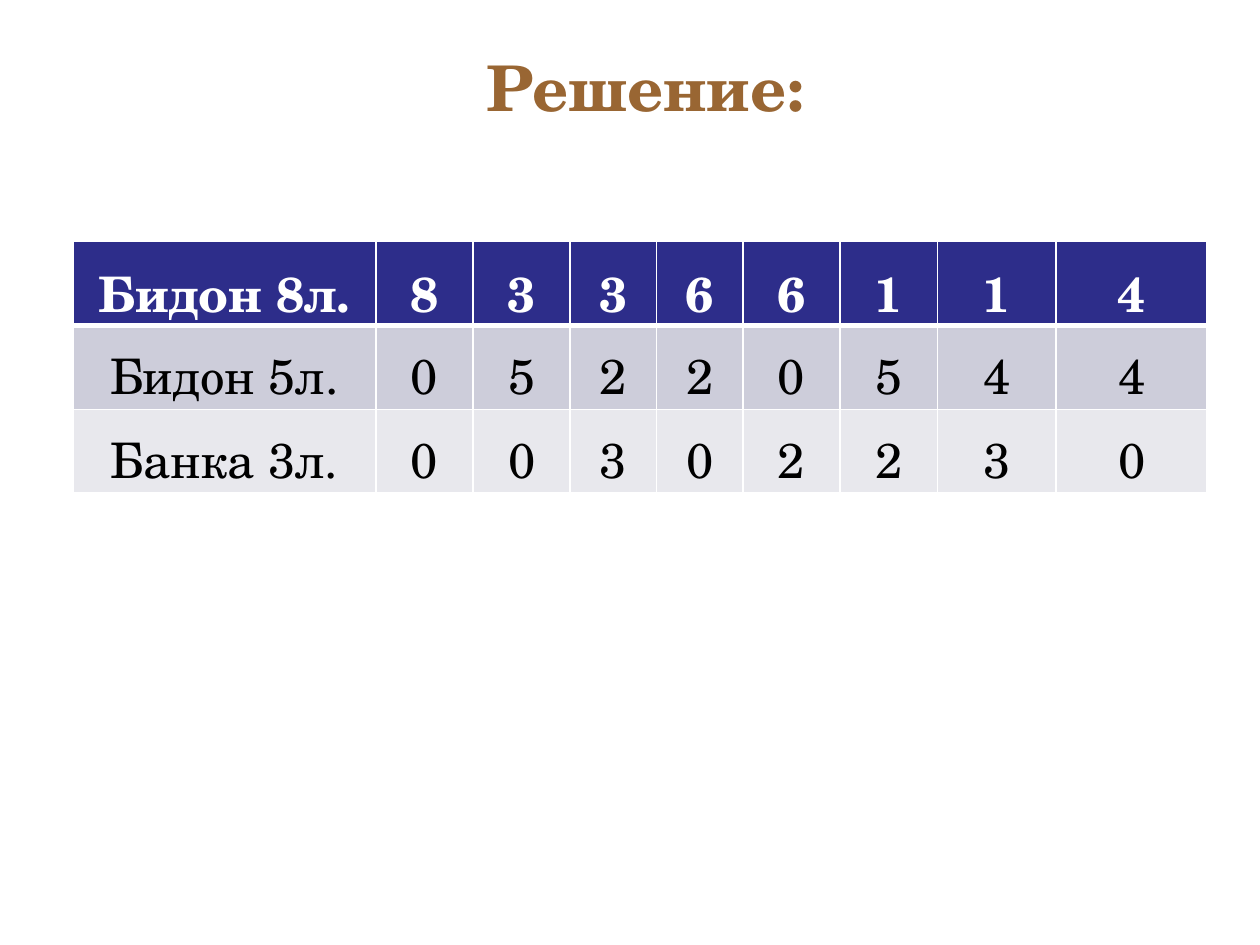
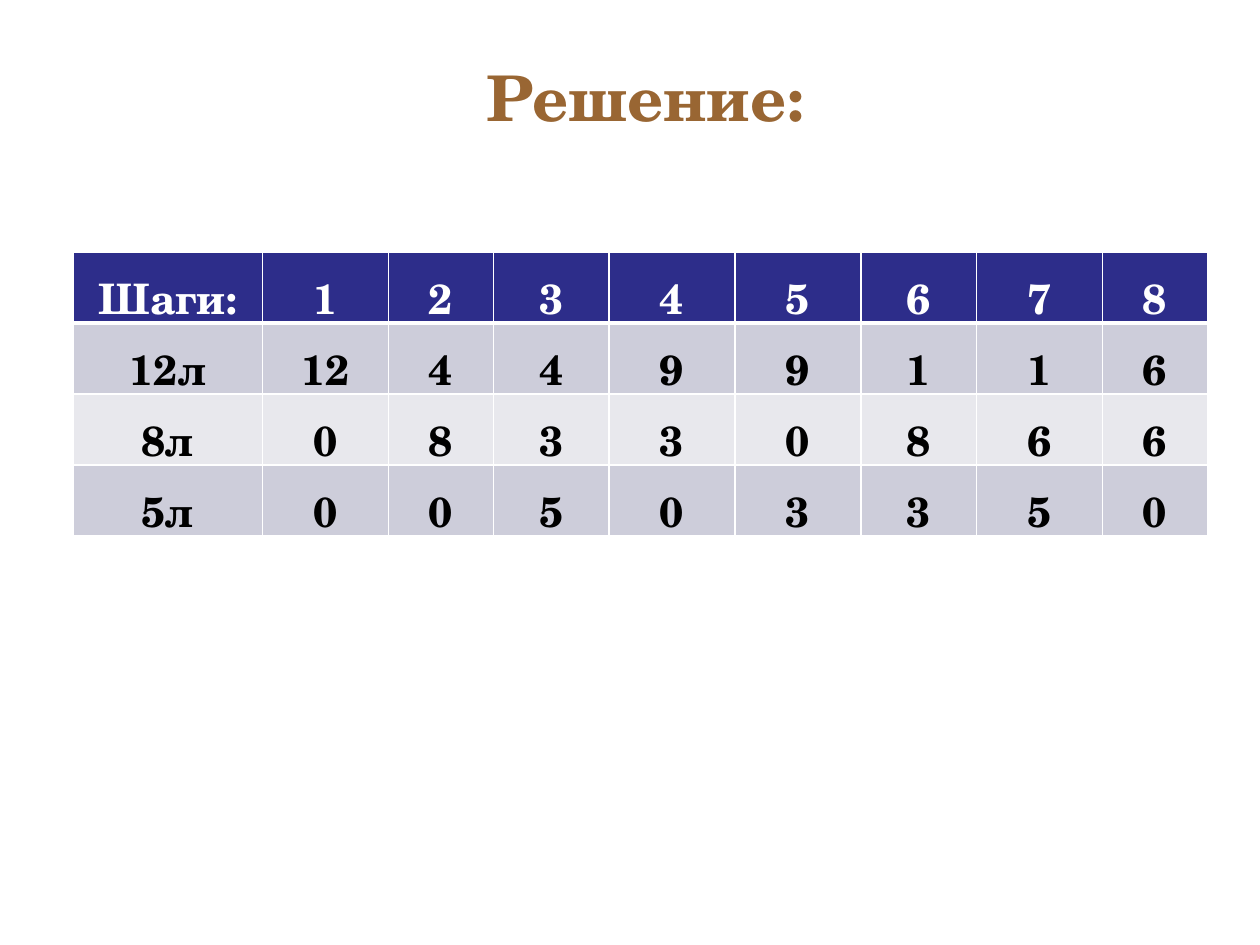
from dataclasses import dataclass

import pptx
import pptx.dml.color
import pptx.enum.text
import pptx.oxml.ns
import pptx.util
from lxml import etree
from pptx.util import Cm


@dataclass(frozen=True)
class Theme:
    font: str = "TeX Gyre Schola"
    title: str = "996633"
    header: str = "2D2D8A"
    bands: tuple = ("CDCDDA", "E8E8ED")
    light: str = "FFFFFF"
    dark: str = "000000"
    title_size: int = 36
    line: int = 1
    header_line: int = 3


def rgb(value):
    return pptx.dml.color.RGBColor.from_string(value)


def write(tf, text, *, font, size, color, bold):
    """Fill a text frame with one centred paragraph."""
    p = tf.paragraphs[0]
    p.alignment = pptx.enum.text.PP_ALIGN.CENTER
    r = p.add_run()
    r.text = text
    r.font.name = font
    r.font.size = pptx.util.Pt(size)
    r.font.bold = bold
    r.font.color.rgb = rgb(color)


def add_borders(cell, color, **widths):
    """Draw cell edges L, R, T, B (in that order), widths in points."""
    tc_pr = cell._tc.get_or_add_tcPr()
    qn = pptx.oxml.ns.qn
    for side, width in widths.items():
        ln = etree.SubElement(tc_pr, qn(f"a:ln{side}"), w=str(pptx.util.Pt(width)))
        fill = etree.SubElement(ln, qn("a:solidFill"))
        etree.SubElement(fill, qn("a:srgbClr"), val=color)


class Deck:
    def __init__(self, theme):
        self.theme = theme
        self.prs = pptx.Presentation()
        self.prs.slide_width, self.prs.slide_height = Cm(25.4), Cm(19.05)
        self.s = None

    def slide(self):
        self.s = self.prs.slides.add_slide(self.prs.slide_layouts[6])

    def title(self, text, top):
        t = self.theme
        tf = self.s.shapes.add_textbox(Cm(9.1), Cm(top), Cm(7.82), Cm(1.8)).text_frame
        tf.word_wrap = True
        write(tf, text, font=t.font, size=t.title_size, color=t.title, bold=True)

    def table(self, rows, *, top, row_height, weights, size, body_bold):
        """Add a table whose column widths share the full width by weight."""
        t = self.theme
        width = Cm(22.86)
        tbl = self.s.shapes.add_table(
            len(rows), len(weights), Cm(1.48), Cm(top), width, Cm(row_height * len(rows))
        ).table
        for column, weight in zip(tbl.columns, weights):
            column.width = round(width * weight / sum(weights))
        for i, values in enumerate(rows):
            tbl.rows[i].height = Cm(row_height)
            is_header = i == 0
            fill = t.header if is_header else t.bands[(i - 1) % 2]
            top_line = t.header_line if i == 1 else t.line
            bottom_line = t.header_line if is_header else t.line
            for j, value in enumerate(values):
                cell = tbl.cell(i, j)
                cell.margin_top, cell.margin_bottom = Cm(0.27), Cm(0.1)
                add_borders(cell, t.light, L=t.line, R=t.line, T=top_line, B=bottom_line)
                cell.fill.solid()
                cell.fill.fore_color.rgb = rgb(fill)
                write(cell.text_frame, value, font=t.font, size=size,
                      color=t.light if is_header else t.dark,
                      bold=is_header or body_bold)


def main():
    deck = Deck(Theme())

    deck.slide()
    deck.title("Решение:", top=0.85)
    deck.table(
        [("Бидон 8л.", *"83366114"),
         ("Бидон 5л.", *"05220544"),
         ("Банка 3л.", *"00302230")],
        top=4.87, row_height=1.69, size=28, body_bold=False,
        weights=(28, 9, 9, 8, 8, 9, 9, 11, 14),
    )

    deck.slide()
    deck.title("Решение:", top=1.06)
    deck.table(
        [("Шаги:", *"12345678"),
         ("12л", "12", *"4499116"),
         ("8л", *"08330866"),
         ("5л", *"00503350")],
        top=5.08, row_height=1.43, size=24, body_bold=True,
        weights=(18, 12, 10, 11, 12, 12, 11, 12, 10),
    )

    deck.prs.save("out.pptx")


if __name__ == "__main__":
    main()
